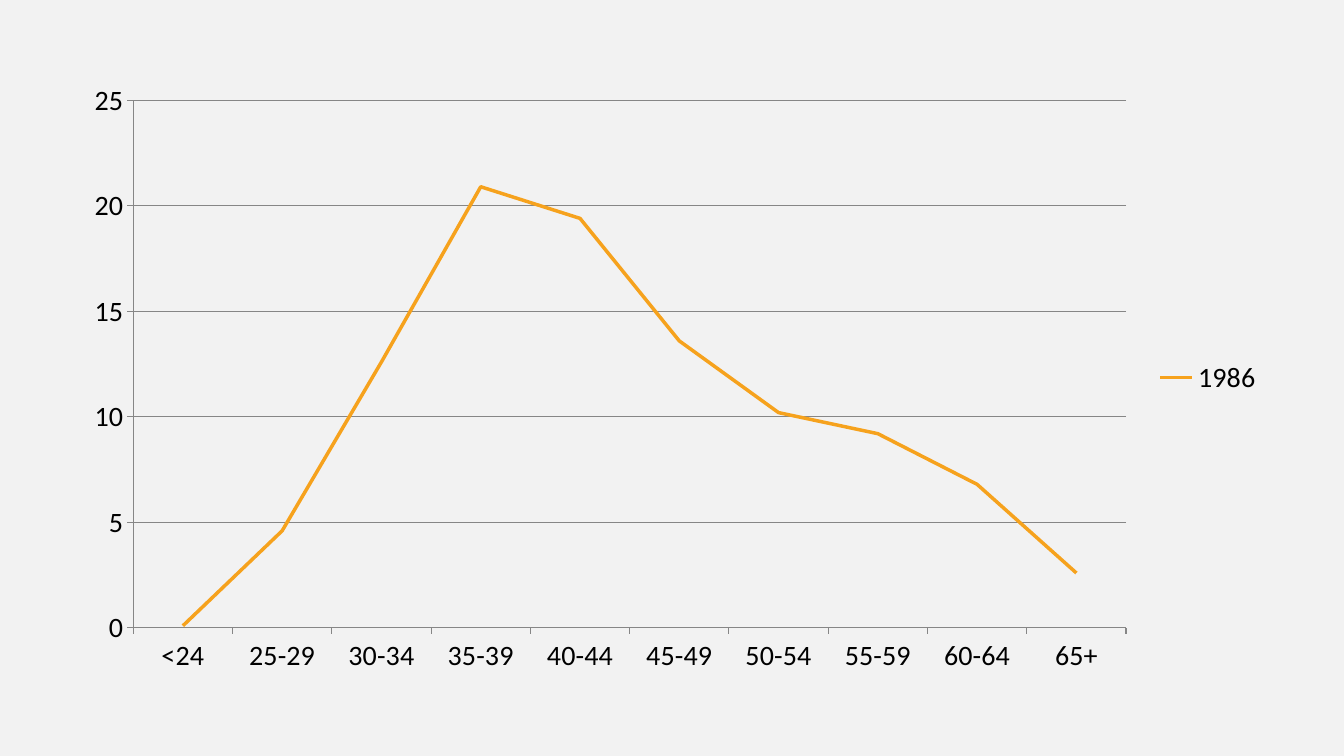
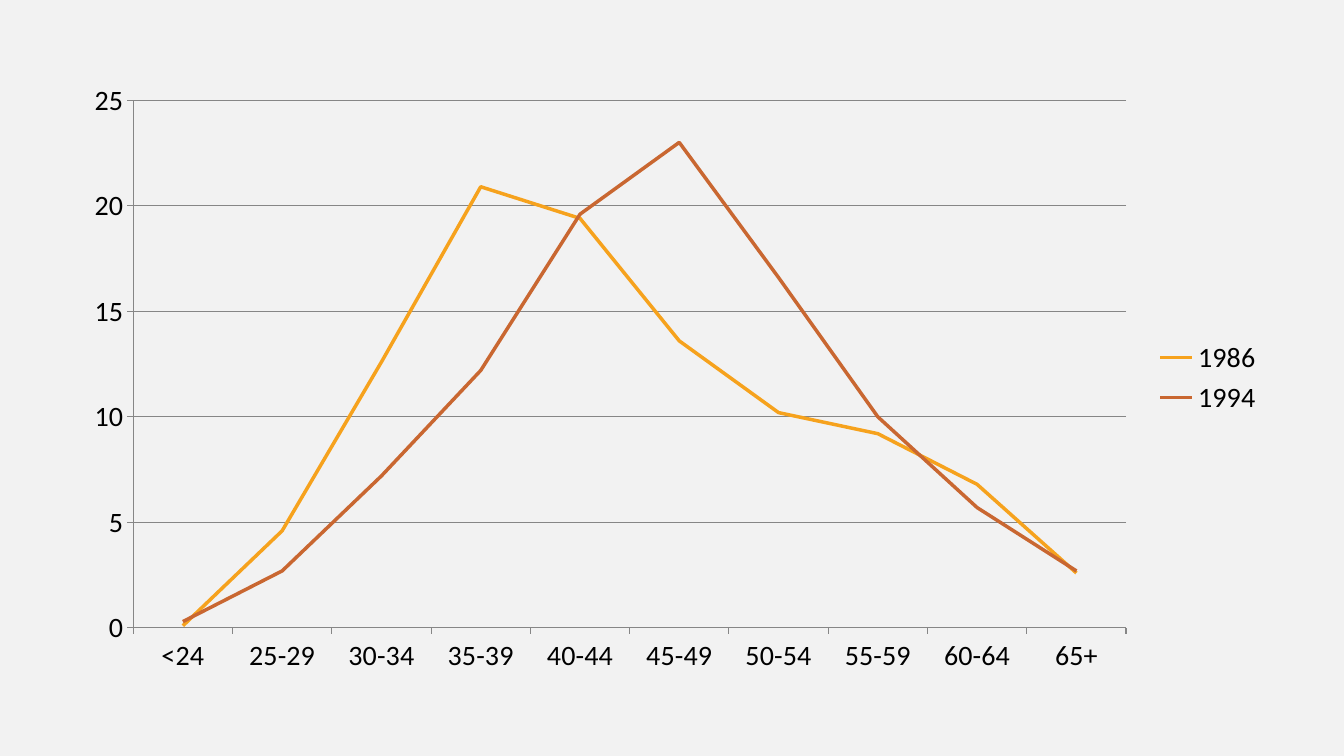
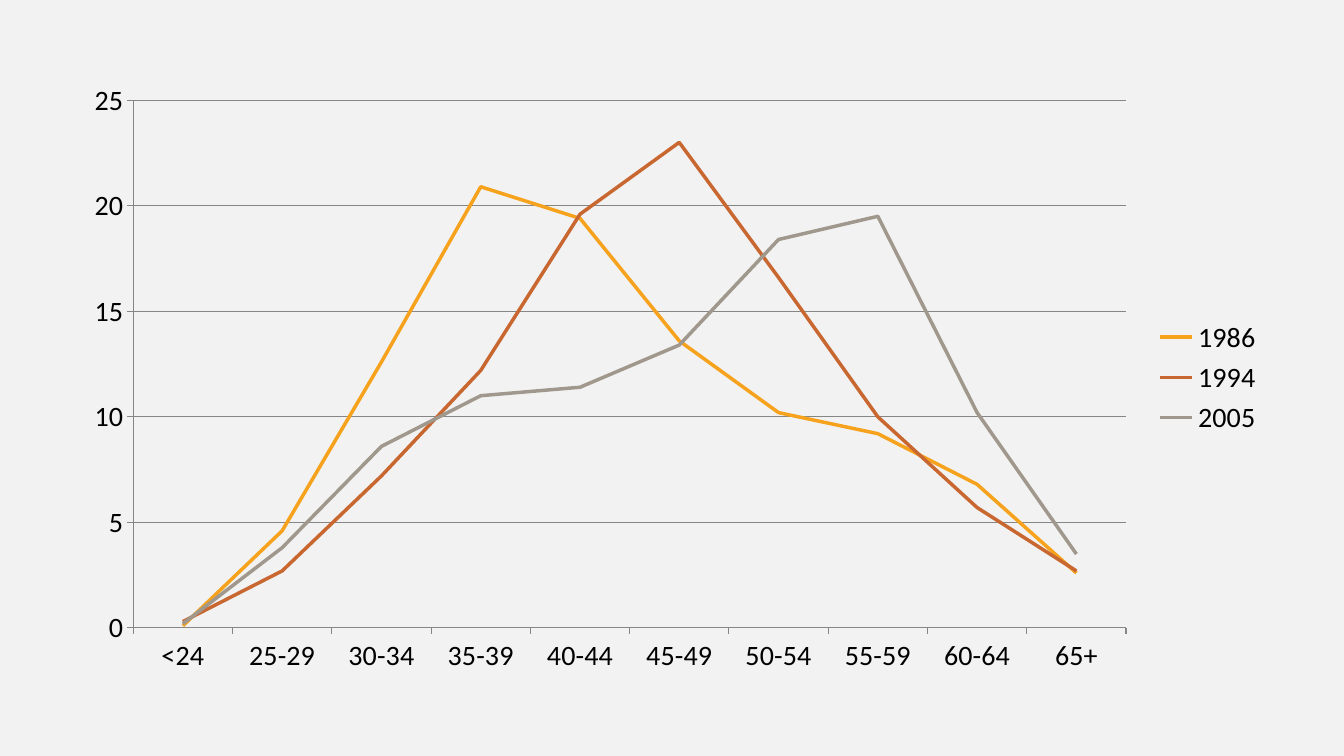
from dataclasses import dataclass

from lxml import etree
from pptx import Presentation
from pptx.chart.data import CategoryChartData
from pptx.dml.color import RGBColor
from pptx.enum.chart import XL_CHART_TYPE, XL_LEGEND_POSITION, XL_TICK_MARK
from pptx.oxml.ns import qn
from pptx.util import Pt

LINE_CHART = XL_CHART_TYPE.LINE
LEGEND_RIGHT = XL_LEGEND_POSITION.RIGHT
TICK_OUTSIDE = XL_TICK_MARK.OUTSIDE
TICK_NONE = XL_TICK_MARK.NONE


@dataclass(frozen=True)
class Theme:
    background: str = "F2F2F2"
    text: str = "000000"
    rule: str = "868686"
    font: str = "Calibri"
    label_size: float = 20
    rule_width: float = 0.75
    series_width: float = 2.5


THEME = Theme()
BLANK_LAYOUT = 6
SLIDE_SIZE = (960, 540)
# Left, top, width, height in points; the plot area is measured on the slide.
CHART_BOX = (50.4, 50.4, 859, 438.5)
PLOT_BOX = (95.2, 71.6, 709.2, 377)

AGE_GROUPS = ["<24", "25-29", "30-34", "35-39", "40-44",
              "45-49", "50-54", "55-59", "60-64", "65+"]
# Year, line colour, share in each age group
SURVEYS = [
    ("1986", "F6A21D", (0.1, 4.6, 12.6, 20.9, 19.4, 13.6, 10.2, 9.2, 6.8, 2.6)),
    ("1994", "C96731", (0.3, 2.7, 7.2, 12.2, 19.6, 23, 16.6, 10, 5.7, 2.7)),
    ("2005", "A0988C", (0.2, 3.8, 8.6, 11, 11.4, 13.4, 18.4, 19.5, 10.2, 3.5)),
]


def format_line(line, color, width):
    line.color.rgb = RGBColor.from_string(color)
    line.width = Pt(width)


def format_font(font):
    font.name = THEME.font
    font.size = Pt(THEME.label_size)
    font.color.rgb = RGBColor.from_string(THEME.text)


def format_axis(axis):
    axis.major_tick_mark = TICK_OUTSIDE
    axis.minor_tick_mark = TICK_NONE
    format_font(axis.tick_labels.font)
    format_line(axis.format.line, THEME.rule, THEME.rule_width)


def format_value_axis(axis):
    format_axis(axis)
    axis.minimum_scale, axis.maximum_scale, axis.major_unit = 0, 25, 5
    axis.has_major_gridlines = True
    format_line(axis.major_gridlines.format.line, THEME.rule, THEME.rule_width)


def place_plot_area(chart):
    """Fix the inner plot area, as fractions of the chart's box."""
    left, top, width, height = CHART_BOX
    plot_left, plot_top, plot_width, plot_height = PLOT_BOX
    settings = {
        "layoutTarget": "inner", "xMode": "edge", "yMode": "edge",
        "x": (plot_left - left) / width, "y": (plot_top - top) / height,
        "w": plot_width / width, "h": plot_height / height,
    }
    plot_area = chart.element.find(".//" + qn("c:plotArea"))
    for old_layout in plot_area.findall(qn("c:layout")):
        plot_area.remove(old_layout)
    layout = etree.Element(qn("c:layout"))
    manual = etree.SubElement(layout, qn("c:manualLayout"))
    for name, value in settings.items():
        etree.SubElement(manual, qn("c:" + name)).set("val", str(value))
    plot_area.insert(0, layout)


def add_line_chart(page, surveys):
    data = CategoryChartData(number_format="General")
    data.categories = AGE_GROUPS
    for year, _, values in surveys:
        data.add_series(year, values)
    box = [Pt(length) for length in CHART_BOX]
    chart = page.shapes.add_chart(LINE_CHART, *box, data).chart
    chart.has_title = False
    format_font(chart.font)
    format_axis(chart.category_axis)
    format_value_axis(chart.value_axis)

    chart.has_legend = True
    chart.legend.position = LEGEND_RIGHT
    chart.legend.include_in_layout = False
    format_font(chart.legend.font)

    plot = chart.plots[0]
    plot.vary_by_categories = False
    for series, (_, color, _) in zip(plot.series, surveys):
        series.smooth = False
        format_line(series.format.line, color, THEME.series_width)
    place_plot_area(chart)


def main():
    deck = Presentation()
    deck.slide_width, deck.slide_height = (Pt(side) for side in SLIDE_SIZE)
    fill = deck.slide_master.background.fill
    fill.solid()
    fill.fore_color.rgb = RGBColor.from_string(THEME.background)

    for count in range(1, len(SURVEYS) + 1):
        page = deck.slides.add_slide(deck.slide_layouts[BLANK_LAYOUT])
        add_line_chart(page, SURVEYS[:count])
    deck.save("out.pptx")


if __name__ == "__main__":
    main()
